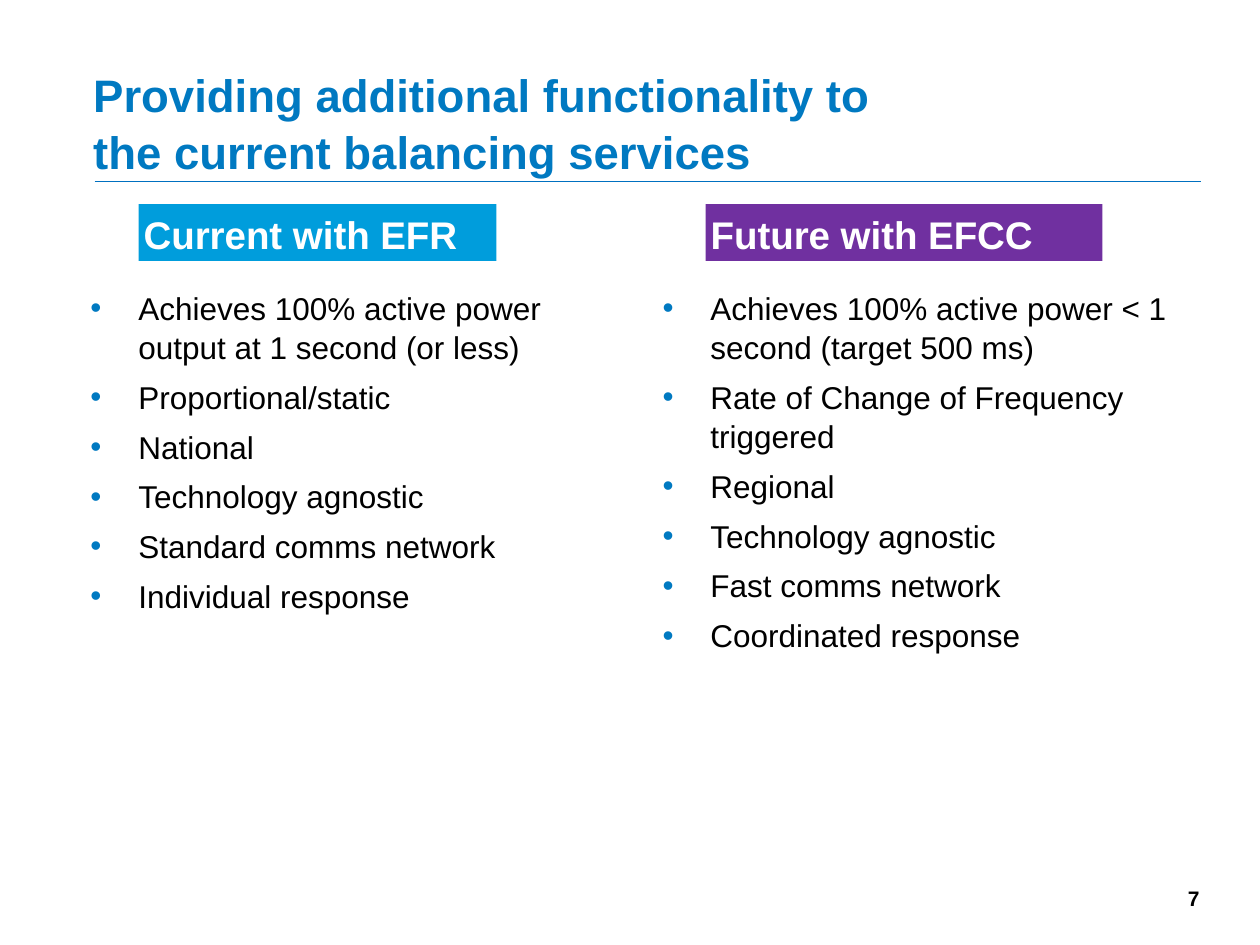
from lxml import etree
from pptx import Presentation
from pptx.dml.color import RGBColor
from pptx.enum.shapes import MSO_CONNECTOR, MSO_SHAPE
from pptx.enum.text import MSO_ANCHOR, PP_ALIGN
from pptx.oxml.ns import qn
from pptx.util import Inches, Pt

STRAIGHT = MSO_CONNECTOR.STRAIGHT
RECTANGLE = MSO_SHAPE.RECTANGLE
TOP, BOTTOM = MSO_ANCHOR.TOP, MSO_ANCHOR.BOTTOM
LEFT, RIGHT = PP_ALIGN.LEFT, PP_ALIGN.RIGHT

FONT = "Arial"
TITLE_BLUE, RULE_BLUE = "0079C1", "0070C0"
BLACK, WHITE = "000000", "FFFFFF"
LIST_TOP, HEADING_TOP, HEADING_HEIGHT = 2.23, 1.62, 0.45

SERVICES = [
    {
        "heading": "Current with EFR", "fill": "009DDC",
        "heading_left": 1.1, "heading_width": 2.84,
        "list_box": (0.62, LIST_TOP, 3.84, 2.88),
        "features": [
            "Achieves 100% active power output at 1 second (or less)",
            "Proportional/static",
            "National",
            "Technology agnostic",
            "Standard comms network",
            "Individual response",
        ],
    },
    {
        "heading": "Future with EFCC", "fill": "7030A0",
        "heading_left": 5.6, "heading_width": 3.15,
        "list_box": (5.16, LIST_TOP, 4.38, 3.41),
        "features": [
            "Achieves 100% active power < 1 second (target 500 ms)",
            "Rate of Change of Frequency triggered",
            "Regional",
            "Technology agnostic",
            "Fast comms network",
            "Coordinated response",
        ],
    },
]


def color(value):
    """Turn a hex string into a colour."""
    return RGBColor.from_string(value)


def set_frame(frame, side, edge, anchor=TOP):
    """Set wrapping, insets in inches and the vertical anchor."""
    frame.word_wrap = True
    frame.margin_left = frame.margin_right = Inches(side)
    frame.margin_top = frame.margin_bottom = Inches(edge)
    frame.vertical_anchor = anchor


def write(paragraph, text, size, ink, bold=False, align=LEFT, spacing=1.04):
    """Add one formatted run to a paragraph."""
    paragraph.alignment = align
    paragraph.line_spacing = spacing
    run = paragraph.add_run()
    run.text = text
    run.font.name = FONT
    run.font.size = Pt(size)
    run.font.bold = bold
    run.font.color.rgb = color(ink)


def add_bullet(paragraph):
    """Give a paragraph a hanging blue bullet."""
    properties = paragraph._p.get_or_add_pPr()
    properties.set("marL", str(Inches(0.38)))
    properties.set("indent", str(Inches(-0.38)))
    bullet_color = etree.SubElement(properties, qn("a:buClr"))
    etree.SubElement(bullet_color, qn("a:srgbClr"), val=TITLE_BLUE)
    etree.SubElement(properties, qn("a:buFont"), typeface=FONT)
    etree.SubElement(properties, qn("a:buChar"), char="•")


def add_title(slide, left, top, width, height, text):
    """Place the bottom-anchored title and the rule below it."""
    rule_top = Inches(top + height - 0.03)
    rule = slide.shapes.add_connector(
        STRAIGHT, Inches(0.75), rule_top, Inches(9.53), rule_top)
    rule.line.color.rgb = color(RULE_BLUE)
    rule.line.width = Pt(1)
    etree.SubElement(rule._element.spPr, qn("a:effectLst"))
    title = slide.shapes.add_textbox(
        Inches(left), Inches(top), Inches(width), Inches(height))
    set_frame(title.text_frame, 0, 0.05, BOTTOM)
    write(title.text_frame.paragraphs[0], text, 26, TITLE_BLUE, bold=True, spacing=1.05)


def add_heading(slide, left, top, width, height, text, fill):
    """Place a filled column heading."""
    heading = slide.shapes.add_shape(
        RECTANGLE, Inches(left), Inches(top), Inches(width), Inches(height))
    heading.shadow.inherit = False
    heading.fill.solid()
    heading.fill.fore_color.rgb = color(fill)
    heading.line.fill.background()
    set_frame(heading.text_frame, 0.04, 0.04)
    write(heading.text_frame.paragraphs[0], text, 22, WHITE, bold=True)


def add_features(slide, left, top, width, height, features):
    """Place a bulleted list of service features."""
    listing = slide.shapes.add_textbox(
        Inches(left), Inches(top), Inches(width), Inches(height))
    frame = listing.text_frame
    set_frame(frame, 0.1, 0.05)
    for index, feature in enumerate(features):
        paragraph = frame.add_paragraph() if index else frame.paragraphs[0]
        add_bullet(paragraph)
        paragraph.space_after = Pt(6)
        write(paragraph, feature, 18, BLACK)


def add_page_number(slide, left, top, width, height, number):
    """Place the right-aligned page number."""
    page = slide.shapes.add_textbox(
        Inches(left), Inches(top), Inches(width), Inches(height))
    set_frame(page.text_frame, 0, 0.05)
    write(page.text_frame.paragraphs[0], number, 12, BLACK, bold=True, align=RIGHT, spacing=1.0)


def main():
    """Build and save the slide."""
    deck = Presentation()
    deck.slide_width, deck.slide_height = Inches(10), Inches(7.5)
    slide = deck.slides.add_slide(deck.slide_layouts[6])
    add_title(slide, 0.74, 0.97, 6.3, 0.5,
              "Providing additional functionality to the current balancing services")
    add_page_number(slide, 7.19, 6.98, 2.33, 0.4, "7")
    for service in SERVICES:
        add_features(slide, *service["list_box"], service["features"])
        add_heading(slide, service["heading_left"], HEADING_TOP, service["heading_width"],
                    HEADING_HEIGHT, service["heading"], service["fill"])
    deck.save("out.pptx")


if __name__ == "__main__":
    main()
